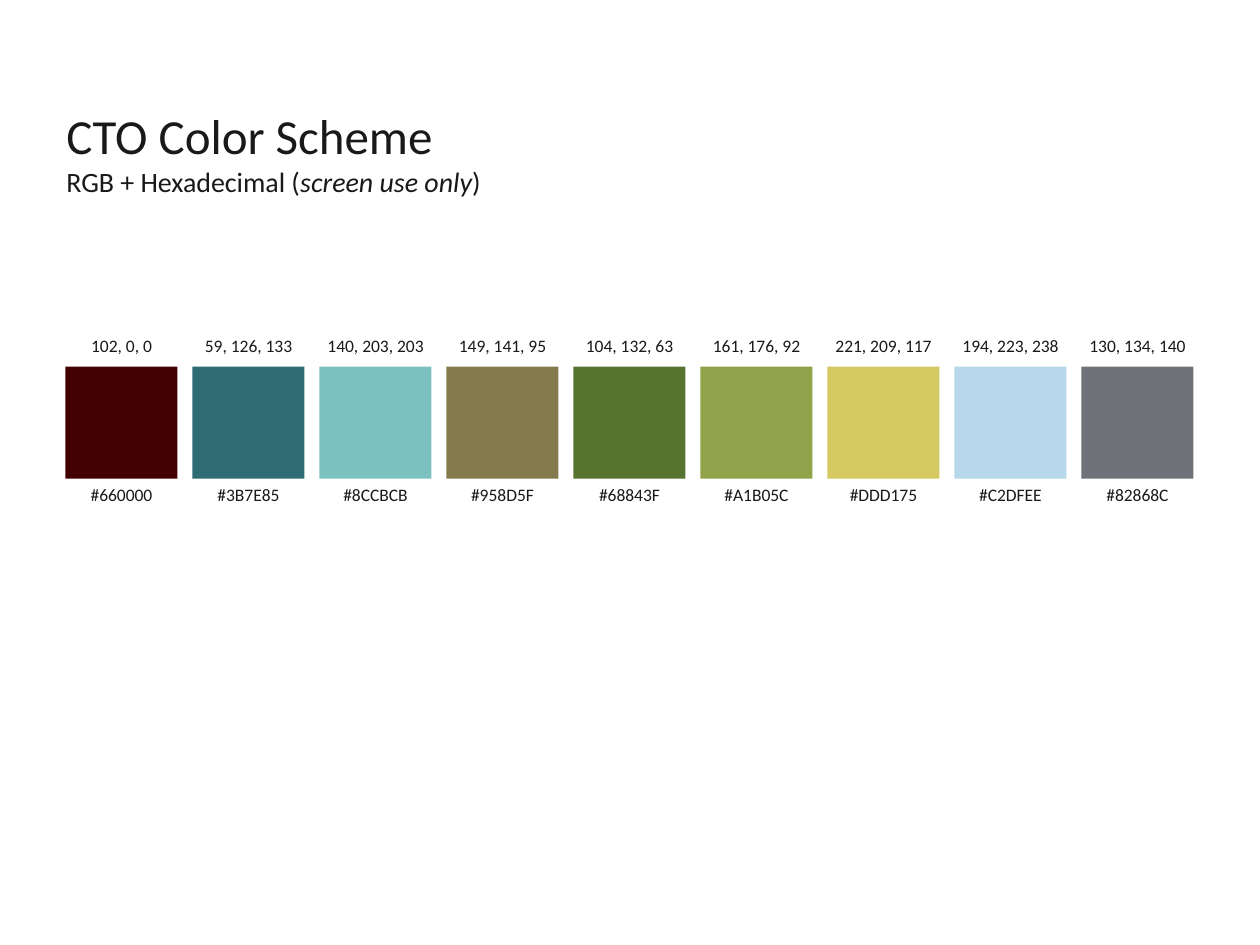
from pptx import Presentation
from pptx.dml.color import RGBColor
from pptx.enum.shapes import MSO_SHAPE
from pptx.enum.text import MSO_AUTO_SIZE, PP_ALIGN
from pptx.util import Cm, Pt

FONT = "Calibri"
COLORS = {"text": "191919"}

# Hexadecimal value on the label: fill of the swatch
SWATCHES = {
    "660000": "420000",
    "3B7E85": "2F6B72",
    "8CCBCB": "7BC1C0",
    "958D5F": "837B4C",
    "68843F": "567330",
    "A1B05C": "90A34A",
    "DDD175": "D5C962",
    "C2DFEE": "B6D8EA",
    "82868C": "6F7379",
}

# Swatch row, in centimetres
ROW_LEFT = 1.17
PITCH = 2.56
SQUARE = 2.26
LABEL_HEIGHT = 0.68
RGB_TOP = 6.63
SQUARE_TOP = 7.39
HEX_TOP = 9.63


def style(paragraph, size):
    paragraph.font.name = FONT
    paragraph.font.size = Pt(size)
    paragraph.font.color.rgb = RGBColor.from_string(COLORS["text"])


def add_heading(slide):
    heading = slide.shapes.add_textbox(Cm(1.09), Cm(2.01), Cm(8.99), Cm(2.13))
    frame = heading.text_frame
    frame.word_wrap = False
    frame.auto_size = MSO_AUTO_SIZE.SHAPE_TO_FIT_TEXT

    title = frame.paragraphs[0]
    title.text = "CTO Color Scheme"
    style(title, 28)

    subtitle = frame.add_paragraph()
    style(subtitle, 16)
    subtitle.add_run().text = "RGB + Hexadecimal ("
    usage = subtitle.add_run()
    usage.text = "screen use only"
    usage.font.italic = True
    subtitle.add_run().text = ")"


def add_label(shapes, text, left, top):
    label = shapes.add_textbox(Cm(left), Cm(top), Cm(PITCH), Cm(LABEL_HEIGHT))
    frame = label.text_frame
    frame.word_wrap = True
    frame.auto_size = MSO_AUTO_SIZE.SHAPE_TO_FIT_TEXT
    value = frame.paragraphs[0]
    value.text = text
    value.alignment = PP_ALIGN.CENTER
    style(value, 10)


def add_square(shapes, fill, left):
    square = shapes.add_shape(
        MSO_SHAPE.RECTANGLE, Cm(left), Cm(SQUARE_TOP), Cm(SQUARE), Cm(SQUARE)
    )
    square.shadow.inherit = False
    square.fill.solid()
    square.fill.fore_color.rgb = RGBColor.from_string(fill)
    square.line.fill.background()


def add_swatch(slide, hex_value, fill, left):
    # Square grouped with its hexadecimal label
    swatch = slide.shapes.add_group_shape()
    add_label(swatch.shapes, f"#{hex_value}", left, HEX_TOP)
    add_square(swatch.shapes, fill, left + (PITCH - SQUARE) / 2)

    # RGB label above, worked out from the hexadecimal value
    rgb_text = ", ".join(str(channel) for channel in RGBColor.from_string(hex_value))
    add_label(slide.shapes, rgb_text, left, RGB_TOP)


def main():
    presentation = Presentation()
    presentation.slide_width = Cm(25.4)
    presentation.slide_height = Cm(19.05)
    slide = presentation.slides.add_slide(presentation.slide_layouts[6])

    add_heading(slide)
    for column, (hex_value, fill) in enumerate(SWATCHES.items()):
        add_swatch(slide, hex_value, fill, ROW_LEFT + column * PITCH)

    presentation.save("out.pptx")


if __name__ == "__main__":
    main()
